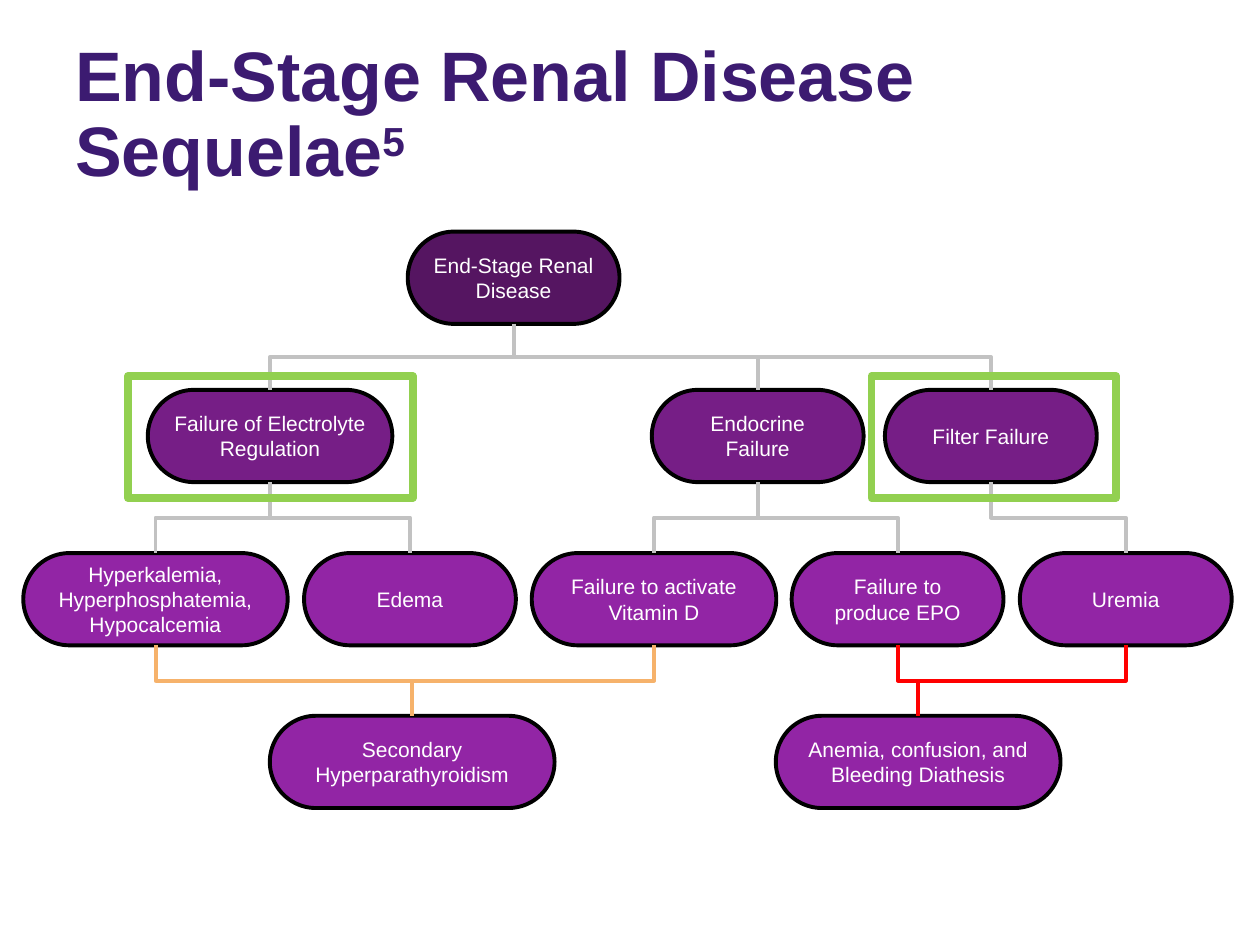
from dataclasses import dataclass

from lxml import etree
from pptx import Presentation
from pptx import util as u
from pptx.dml.color import RGBColor
from pptx.enum import shapes, text
from pptx.oxml.ns import qn

WHITE = RGBColor(0xFF, 0xFF, 0xFF)
BLACK = RGBColor(0x00, 0x00, 0x00)
INDIGO = RGBColor(0x3C, 0x1B, 0x71)
DARK = RGBColor(0x55, 0x15, 0x61)
MEDIUM = RGBColor(0x76, 0x1E, 0x86)
BRIGHT = RGBColor(0x92, 0x25, 0xA5)
GREY = RGBColor(0xC2, 0xC2, 0xC2)
ORANGE = RGBColor(0xF6, 0xB2, 0x6B)
RED = RGBColor(0xFF, 0x00, 0x00)
GREEN = RGBColor(0x92, 0xD0, 0x50)

FONT = "Arial"
PILL_HEIGHT = 1.86
ROW_TOPS = (4.67, 7.86, 11.15, 14.43)
ROW_FILLS = (DARK, MEDIUM, BRIGHT, BRIGHT)
NARROW, MIDDLE, BROAD, WIDE = 4.27, 4.93, 5.33, 5.74
TOP_SITE, BOTTOM_SITE = 0, 2


@dataclass(frozen=True)
class Pill:
    key: str
    label: str
    row: int
    left: float
    width: float


@dataclass(frozen=True)
class Link:
    parent: str
    child: str
    color: RGBColor = GREY


@dataclass(frozen=True)
class Frame:
    left: float
    width: float


PILLS = (
    Pill("disease", "End-Stage Renal Disease", 0, 8.22, NARROW),
    Pill("electrolyte", "Failure of Electrolyte Regulation", 1, 2.98, MIDDLE),
    Pill("endocrine", "Endocrine Failure", 1, 13.14, NARROW),
    Pill("filter", "Filter Failure", 1, 17.84, NARROW),
    Pill("minerals", "Hyperkalemia, Hyperphosphatemia, Hypocalcemia", 2, 0.47, BROAD),
    Pill("edema", "Edema", 2, 6.13, NARROW),
    Pill("vitamin", "Failure to activate Vitamin D", 2, 10.72, MIDDLE),
    Pill("epo", "Failure to produce EPO", 2, 15.96, NARROW),
    Pill("uremia", "Uremia", 2, 20.56, NARROW),
    Pill("parathyroid", "Secondary Hyperparathyroidism", 3, 5.44, WIDE),
    Pill("anemia", "Anemia, confusion, and Bleeding Diathesis", 3, 15.64, WIDE),
)

LINKS = (
    Link("disease", "electrolyte"),
    Link("disease", "endocrine"),
    Link("disease", "filter"),
    Link("electrolyte", "minerals"),
    Link("electrolyte", "edema"),
    Link("endocrine", "vitamin"),
    Link("endocrine", "epo"),
    Link("filter", "uremia"),
    Link("minerals", "parathyroid", ORANGE),
    Link("vitamin", "parathyroid", ORANGE),
    Link("epo", "anemia", RED),
    Link("uremia", "anemia", RED),
)

FRAMES = (Frame(2.58, WIDE), Frame(17.57, MIDDLE))


def write(box, wording: str, *, size: float, color: RGBColor, bold: bool = False,
          align=text.PP_ALIGN.LEFT, inset: float = 0.25, superscript: str = "",
          line_spacing: float = 1.0, space_after: float = 0) -> None:
    frame = box.text_frame
    frame.word_wrap = True
    frame.vertical_anchor = text.MSO_ANCHOR.MIDDLE
    frame.margin_left = frame.margin_right = u.Cm(0.25)
    frame.margin_top = frame.margin_bottom = u.Cm(inset)
    para = frame.paragraphs[0]
    para.alignment = align
    para.line_spacing = line_spacing
    para.space_after = u.Pt(space_after)
    for content, baseline in ((wording, 0), (superscript, 30000)):
        if not content:
            continue
        span = para.add_run()
        span.text = content
        span.font.name = FONT
        span.font.size = u.Pt(size)
        span.font.bold = bold
        span.font.color.rgb = color
        if baseline:
            span.font._element.set("baseline", str(baseline))


def add_title(page) -> None:
    box = page.shapes.add_textbox(u.Cm(1.27), u.Cm(0.76), u.Cm(22.86), u.Cm(3.18))
    write(box, "End-Stage Renal Disease Sequelae", superscript="5", size=40,
          color=INDIGO, bold=True, inset=0.13, line_spacing=0.9, space_after=12)


def add_pill(page, pill: Pill):
    box = page.shapes.add_shape(
        shapes.MSO_SHAPE.ROUNDED_RECTANGLE, u.Cm(pill.left), u.Cm(ROW_TOPS[pill.row]),
        u.Cm(pill.width), u.Cm(PILL_HEIGHT))
    box.adjustments[0] = 0.5
    box.shadow.inherit = False
    box.fill.solid()
    box.fill.fore_color.rgb = ROW_FILLS[pill.row]
    box.line.color.rgb = BLACK
    box.line.width = u.Pt(2.25)
    write(box, pill.label, size=12, color=WHITE, align=text.PP_ALIGN.CENTER)
    return box


def add_link(page, parent, child, color: RGBColor) -> None:
    start_x, start_y = parent.left + parent.width // 2, parent.top + parent.height
    end_x, end_y = child.left + child.width // 2, child.top
    link = page.shapes.add_connector(
        shapes.MSO_CONNECTOR.ELBOW, start_x, start_y, end_x, end_y)
    link.begin_connect(parent, BOTTOM_SITE)
    link.end_connect(child, TOP_SITE)
    link.width, link.height = end_y - start_y, abs(end_x - start_x)
    link.left = (start_x + end_x - link.width) // 2
    link.top = (start_y + end_y - link.height) // 2
    rightward = end_x > start_x
    properties = link._element.spPr
    transform = properties.find(qn("a:xfrm"))
    transform.set("rot", str((270 if rightward else 90) * 60000))
    transform.set("flipH", "1" if rightward else "0")
    transform.set("flipV", "0")
    link.line.color.rgb = color
    link.line.width = u.Pt(2.25)
    etree.SubElement(properties, qn("a:effectLst"))


def add_frame(page, frame: Frame) -> None:
    box = page.shapes.add_shape(
        shapes.MSO_SHAPE.RECTANGLE, u.Cm(frame.left), u.Cm(7.58),
        u.Cm(frame.width), u.Cm(2.46))
    box.shadow.inherit = False
    box.fill.background()
    box.line.color.rgb = GREEN
    box.line.width = u.Pt(4.5)


def main() -> None:
    deck = Presentation()
    deck.slide_width, deck.slide_height = u.Cm(25.4), u.Cm(19.05)
    page = deck.slides.add_slide(deck.slide_layouts[6])
    add_title(page)
    boxes = {pill.key: add_pill(page, pill) for pill in PILLS}
    for link in LINKS:
        add_link(page, boxes[link.parent], boxes[link.child], link.color)
    for frame in FRAMES:
        add_frame(page, frame)
    deck.save("out.pptx")


if __name__ == "__main__":
    main()
